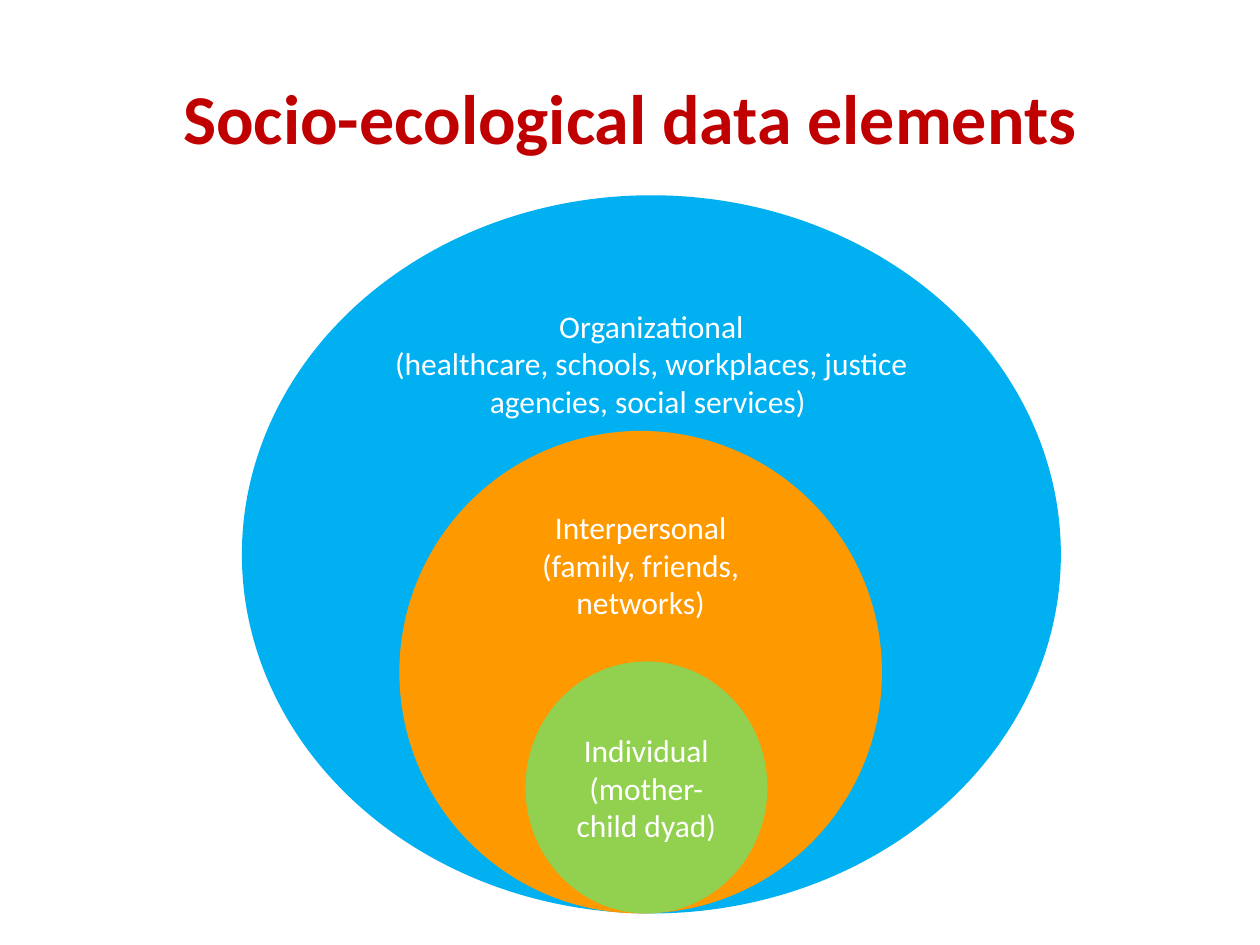
"""Build the socio-ecological slide: a title above three nested ellipses."""
import pptx
import pptx.dml.color
import pptx.enum.shapes
import pptx.enum.text
import pptx.util

ANCHOR = pptx.enum.text.MSO_ANCHOR
THEME = {
    "font": "Calibri",
    "title": ("C00000", 40, True),
    "label": ("FFFFFF", 18, False),
    "organizational": "00B0F0",
    "interpersonal": "FF9900",
    "individual": "92D050",
}

prs = pptx.Presentation()
prs.slide_width = pptx.util.Inches(10)
prs.slide_height = pptx.util.Inches(7.5)
s = prs.slides.add_slide(prs.slide_layouts[6])


def write(sp, lines, style, anchor):
    color, size, bold = THEME[style]
    tf = sp.text_frame
    tf.text = "\n".join(lines)
    tf.word_wrap = True
    tf.vertical_anchor = anchor
    for p in tf.paragraphs:
        p.alignment = pptx.enum.text.PP_ALIGN.CENTER
        for r in p.runs:
            r.font.name = THEME["font"]
            r.font.size = pptx.util.Pt(size)
            r.font.bold = bold
            r.font.color.rgb = pptx.dml.color.RGBColor.from_string(color)


baseline = 7.25
rings = [
    ("organizational", 1.92, 6.5, 5.7, ANCHOR.TOP,
     ["Organizational", "(healthcare, schools, workplaces, justice agencies, social services) "]),
    ("interpersonal", 3.17, 3.83, 3.83, ANCHOR.TOP,
     ["Interpersonal", "(family, friends, networks)"]),
    ("individual", 4.17, 1.92, 2, ANCHOR.MIDDLE,
     ["Individual", "(mother-child dyad)"]),
]
for level, left, width, height, anchor, lines in rings:
    box = [pptx.util.Inches(v) for v in (left, baseline - height, width, height)]
    sp = s.shapes.add_shape(pptx.enum.shapes.MSO_SHAPE.OVAL, *box)
    sp.shadow.inherit = False
    sp.fill.solid()
    sp.fill.fore_color.rgb = pptx.dml.color.RGBColor.from_string(THEME[level])
    sp.line.fill.background()
    write(sp, lines, "label", anchor)

box = [pptx.util.Inches(v) for v in (0.5, 0.3, 9, 1.25)]
write(s.shapes.add_textbox(*box), ["Socio-ecological data elements"], "title", ANCHOR.MIDDLE)

prs.save("out.pptx")
